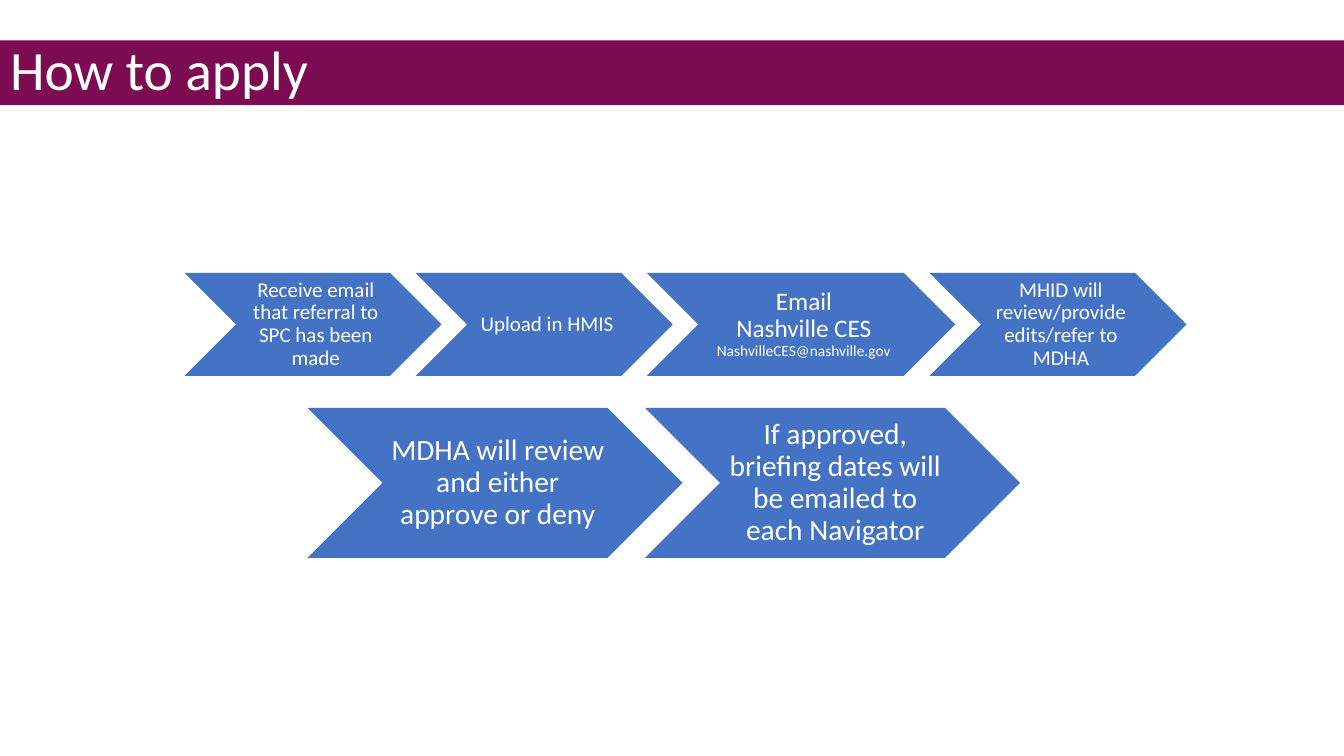
from dataclasses import dataclass

from pptx import Presentation
from pptx.dml.color import RGBColor
from pptx.enum.shapes import MSO_SHAPE
from pptx.enum.text import MSO_ANCHOR, MSO_AUTO_SIZE, PP_ALIGN
from pptx.util import Cm, Pt


@dataclass(frozen=True)
class Theme:
    font: str = "Calibri"
    banner: RGBColor = RGBColor(0x7D, 0x0B, 0x52)
    step: RGBColor = RGBColor(0x44, 0x72, 0xC4)
    text: RGBColor = RGBColor(0xFF, 0xFF, 0xFF)
    title: float = 39.6
    small: float = 11
    normal: float = 15
    medium: float = 18
    large: float = 21


T = Theme()
SLIDE_W, SLIDE_H = 33.87, 19.05
BANNER_TOP, BANNER_H = 1.02, 1.63
NARROW, WIDE, OVERLAP = 2.5, 3, 0.25

TITLE = "How to apply"
ROWS = [
    {"left": 4.65, "top": 6.88, "height": 2.59, "steps": [
        (NARROW, [[("Receive email that referral to SPC has been made", T.normal)]]),
        (NARROW, [[("Upload in HMIS", T.normal)]]),
        (WIDE, [[("Email", T.medium)],
                [("Nashville CES ", T.medium), ("NashvilleCES@nashville.gov", T.small)]]),
        (NARROW, [[("MHID will review/provide edits/refer to MDHA", T.normal)]]),
    ]},
    {"left": 7.75, "top": 10.28, "height": 3.78, "steps": [
        (NARROW, [[("MDHA will review and either approve or deny", T.large)]]),
        (NARROW, [[("If approved, briefing dates will be emailed to each Navigator", T.large)]]),
    ]},
]


def style_run(r, size):
    r.font.name = T.font
    r.font.size = Pt(size)
    r.font.color.rgb = T.text


def add_title(s):
    sp = s.shapes.title
    sp.left, sp.top, sp.width, sp.height = Cm(0), Cm(BANNER_TOP), Cm(SLIDE_W), Cm(BANNER_H)
    sp.fill.solid()
    sp.fill.fore_color.rgb = T.banner
    tf = sp.text_frame
    tf.text = TITLE
    tf.auto_size = MSO_AUTO_SIZE.NONE
    tf.vertical_anchor = MSO_ANCHOR.MIDDLE
    p = tf.paragraphs[0]
    p.alignment = PP_ALIGN.LEFT
    p.line_spacing = 0.9
    style_run(p.runs[0], T.title)


def add_step(s, left, top, width, height, paragraphs):
    sp = s.shapes.add_shape(MSO_SHAPE.CHEVRON, Cm(left), Cm(top), Cm(width), Cm(height))
    sp.shadow.inherit = False
    sp.fill.solid()
    sp.fill.fore_color.rgb = T.step
    sp.line.fill.background()
    tf = sp.text_frame
    tf.word_wrap = True
    tf.vertical_anchor = MSO_ANCHOR.MIDDLE
    tf.margin_left = Cm(0.2)
    tf.margin_right = tf.margin_top = tf.margin_bottom = Cm(0.06)
    for i, runs in enumerate(paragraphs):
        p = tf.add_paragraph() if i else tf.paragraphs[0]
        p.alignment = PP_ALIGN.CENTER
        p.line_spacing = 0.9
        for text, size in runs:
            r = p.add_run()
            r.text = text
            style_run(r, size)


def main():
    prs = Presentation()
    prs.slide_width, prs.slide_height = Cm(SLIDE_W), Cm(SLIDE_H)
    s = prs.slides.add_slide(prs.slide_layouts[5])
    add_title(s)
    for row in ROWS:
        left, height = row["left"], row["height"]
        for ratio, paragraphs in row["steps"]:
            add_step(s, left, row["top"], ratio * height, height, paragraphs)
            left += (ratio - OVERLAP) * height
    prs.save("out.pptx")


if __name__ == "__main__":
    main()
